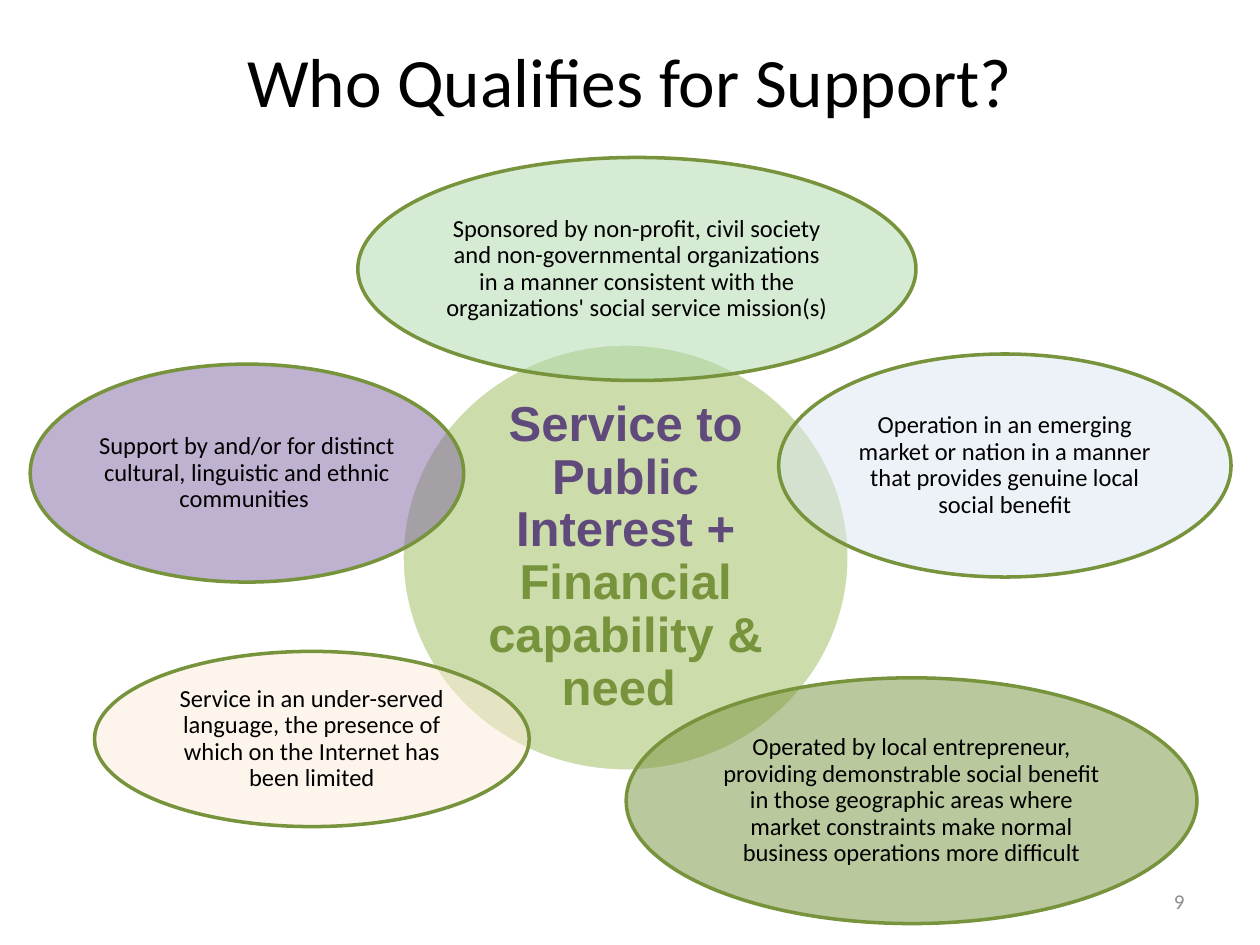
from lxml import etree
from pptx import Presentation
from pptx import util as u
from pptx.dml.color import RGBColor
from pptx.enum import shapes, text
from pptx.oxml.ns import qn

presentation = Presentation()
presentation.slide_width, presentation.slide_height = u.Inches(10), u.Inches(7.5)
slide = presentation.slides.add_slide(presentation.slide_layouts[6])

# The slide is a grid of 100 columns and 75 rows.
COLUMN = presentation.slide_width / 100
ROW = presentation.slide_height / 75


def place(left, top, width, height, fill=None, line=None):
    """Add a half-transparent ellipse, or a text box when no fill is given."""
    box = [round(n) for n in (left * COLUMN, top * ROW, width * COLUMN, height * ROW)]
    if fill is None:
        return slide.shapes.add_textbox(*box)
    shape = slide.shapes.add_shape(shapes.MSO_SHAPE.OVAL, *box)
    shape.shadow.inherit = False
    shape.fill.solid()
    shape.fill.fore_color.rgb = RGBColor.from_string(fill)
    color = shape.fill._xPr.find(qn("a:solidFill"))[0]
    etree.SubElement(color, qn("a:alpha")).set("val", "50000")
    shape.line.color.rgb = RGBColor.from_string(line)
    shape.line.width = u.Pt(2)
    return shape


def write(shape, *runs, size, font="Calibri", bold=False, align="CENTER",
          anchor="MIDDLE", inset=None, spacing=None):
    """Fill a shape with one paragraph of (words, color) runs."""
    frame = shape.text_frame
    frame.word_wrap = True
    frame.vertical_anchor = text.MSO_ANCHOR[anchor]
    if inset is not None:
        frame.margin_left = frame.margin_right = u.Inches(inset)
        frame.margin_top = frame.margin_bottom = u.Inches(inset)
    paragraph = frame.paragraphs[0]
    paragraph.alignment = text.PP_ALIGN[align]
    paragraph.line_spacing = spacing
    for words, color in runs:
        run = paragraph.add_run()
        run.text = words
        run.font.size, run.font.name, run.font.bold = u.Pt(size), font, bold
        run.font.color.rgb = RGBColor.from_string(color)


BLACK, GREEN, PURPLE, GREY = "000000", "77933C", "604A7B", "8C8C8C"

title = place(5, 2.5, 90, 14.2)
write(title, ("Who Qualifies for Support?", BLACK), size=39.6, anchor="TOP")

core = place(31.9, 27.3, 35.5, 33.9, "9BBB59", "FFFFFF")
write(core, ("Service to Public Interest + ", PURPLE), ("Financial capability & need ", GREEN),
      size=28, font="Arial", bold=True, inset=0.04, spacing=0.9)

criteria = [
    ((28.4, 12.5, 44.3, 17.7), "ADD9AB",
     "Sponsored by non-profit, civil society and non-governmental organizations "
     "in a manner consistent with the organizations' social service mission(s)"),
    ((61.8, 28.1, 35.9, 17.7), "DCE6F2",
     "Operation in an emerging market or nation in a manner "
     "that provides genuine local social benefit"),
    ((49.7, 53.8, 45.3, 19.5), GREEN,
     "Operated by local entrepreneur, providing demonstrable social benefit in those "
     "geographic areas where market constraints make normal business operations more difficult"),
    ((7.5, 51.7, 34.5, 13.9), "FDEADA",
     "Service in an under-served language, the presence of which "
     "on the Internet has been limited"),
    ((2.4, 28.9, 34.4, 17.3), "8064A2",
     "Support by and/or for distinct cultural, linguistic and ethnic communities "),
]
for box, fill, words in criteria:
    write(place(*box, fill, GREEN), (words, BLACK), size=14, inset=0.02, spacing=0.9)

page_number = place(71.7, 69.5, 23.3, 4)
write(page_number, ("9", GREY), size=12, align="RIGHT")

presentation.save("out.pptx")
